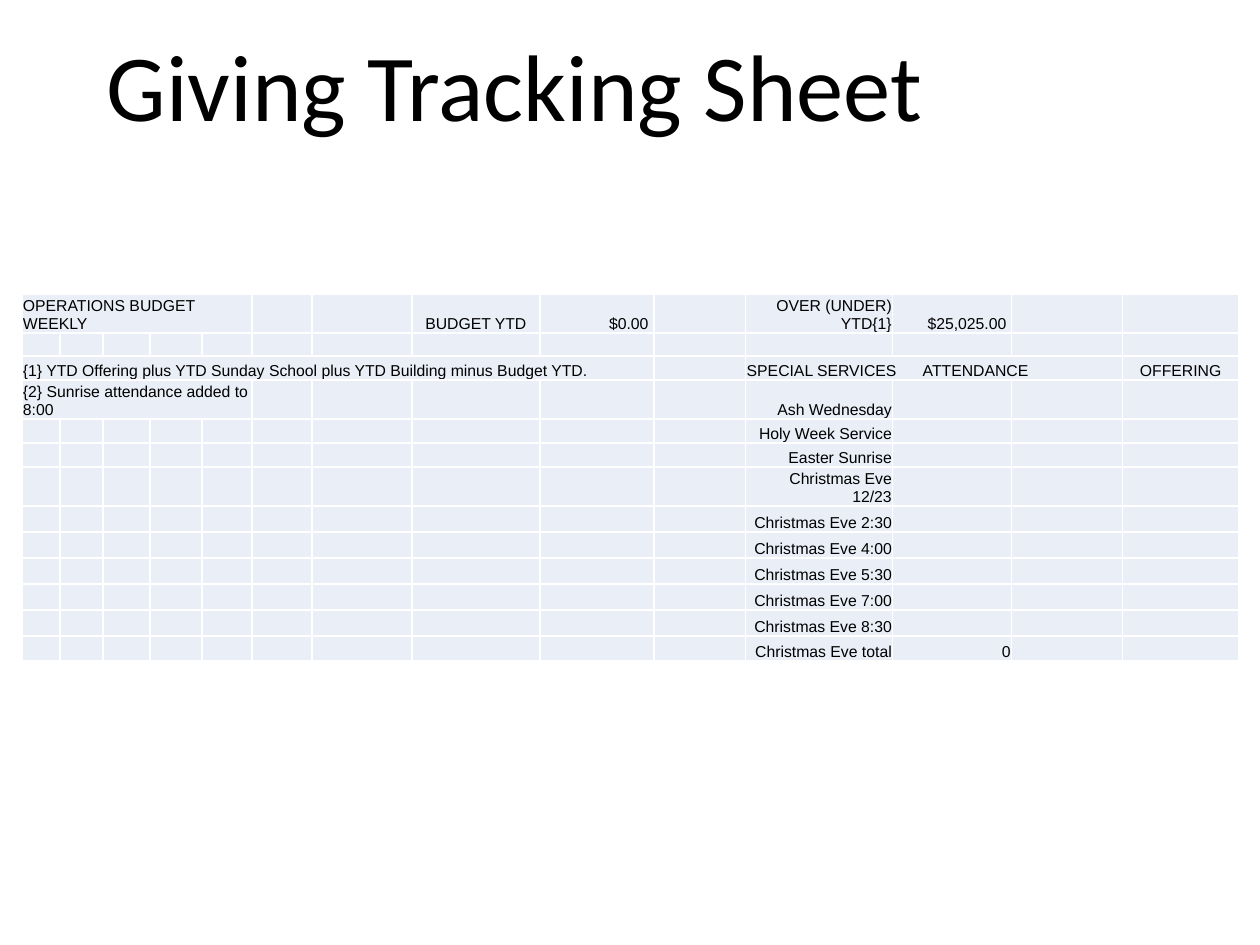
from lxml.etree import SubElement
from pptx import Presentation
from pptx.dml.color import RGBColor
from pptx.enum.text import MSO_ANCHOR as Anchor, MSO_AUTO_SIZE as Fit, PP_ALIGN as Align
from pptx.oxml.ns import qn
from pptx.util import Pt

SCALE = 914400 / 126
BLACK = RGBColor(0x00, 0x00, 0x00)
WHITE = RGBColor(0xFF, 0xFF, 0xFF)
PALE = RGBColor(0xEA, 0xEF, 0xF7)

HEAD = {"name": "Calibri", "size": Pt(54), "bold": False}
BODY = {"name": "Arial", "size": Pt(9), "bold": False}

COLS = [38, 43, 47, 52, 50, 60, 100, 128, 114, 92, 147, 119, 111, 116]
ROWS = [39, 23, 24, 39, 24, 24, 39] + [26] * 5 + [25]
SPANS = [(0, 0, 5), (2, 0, 9), (2, 10, 3), (3, 0, 5)]
TAB = 176
NAME_COL = 10
FIRST = 3
EVENTS = [
    "Ash Wednesday", "Holy Week Service", "Easter Sunrise",
    *[f"Christmas Eve {when}" for when in
      ("12/23", "2:30", "4:00", "5:30", "7:00", "8:30", "total")],
]
CELLS = {
    (0, 0): ("OPERATIONS BUDGET WEEKLY", Align.LEFT),
    (0, 7): ("BUDGET YTD", Align.CENTER),
    (0, 8): ("$0.00 ", Align.RIGHT),
    (0, 10): ("OVER (UNDER) YTD{1}", Align.RIGHT),
    (0, 11): ("$25,025.00 ", Align.RIGHT),
    (2, 0): ("{1} YTD Offering plus YTD Sunday School plus YTD Building "
             "minus Budget YTD.", Align.LEFT),
    (2, 10): ("SPECIAL SERVICES\tATTENDANCE", Align.LEFT),
    (2, 13): ("OFFERING", Align.CENTER),
    (3, 0): ("{2} Sunrise attendance added to 8:00", Align.LEFT),
    (12, 11): ("0", Align.RIGHT),
    **{(row, NAME_COL): (name, Align.RIGHT)
       for row, name in enumerate(EVENTS, FIRST)},
}


def px(num):
    """Turn px into EMU."""
    return round(num * SCALE)


def style(item, form):
    """Set each value of a format on an item."""
    for key, value in form.items():
        setattr(item, key, value)


def write(para, text, form, align):
    """Write black text in a paragraph."""
    para.alignment = align
    run = para.add_run()
    run.text = text
    style(run.font, form)
    run.font.color.rgb = BLACK


def add_tab(para, pos):
    """Add a left tab stop to a paragraph."""
    tabs = SubElement(para._p.get_or_add_pPr(), qn("a:tabLst"))
    SubElement(tabs, qn("a:tab"), pos=str(px(pos)), algn="l")


def edge(cell):
    """Draw thin white borders around a cell."""
    props = cell._tc.get_or_add_tcPr()
    for side in ("lnL", "lnR", "lnT", "lnB"):
        line = SubElement(props, qn(f"a:{side}"), w=str(Pt(1)))
        fill = SubElement(line, qn("a:solidFill"))
        SubElement(fill, qn("a:srgbClr"), val=str(WHITE))


def add_title(slide, left, top, width, height):
    """Place the slide title in its box."""
    title = slide.shapes.title
    style(title, {"left": px(left), "top": px(top),
                  "width": px(width), "height": px(height)})
    frame = title.text_frame
    style(frame, {"word_wrap": True, "auto_size": Fit.NONE,
                  "vertical_anchor": Anchor.TOP})
    write(frame.paragraphs[0], "Giving Tracking Sheet", HEAD, Align.LEFT)


def fill_cell(cell, entry):
    """Format a cell and write its entry, if any."""
    style(cell, {"margin_left": px(1), "margin_right": px(1),
                 "margin_top": px(1), "margin_bottom": 0,
                 "vertical_anchor": Anchor.BOTTOM})
    edge(cell)
    cell.fill.solid()
    cell.fill.fore_color.rgb = PALE
    para = cell.text_frame.paragraphs[0]
    if entry:
        text, align = entry
        write(para, text, BODY, align)
        if "\t" in text:
            add_tab(para, TAB)
    else:
        SubElement(para._p, qn("a:endParaRPr"), sz="900")


def add_sheet(slide, left, top):
    """Place the giving table at a corner."""
    table = slide.shapes.add_table(
        len(ROWS), len(COLS), px(left), px(top),
        px(sum(COLS)), px(sum(ROWS))).table
    style(table, {"first_row": False, "horz_banding": False})
    for col, width in zip(table.columns, COLS):
        col.width = px(width)
    for row, height in zip(table.rows, ROWS):
        row.height = px(height)
    for row, col, count in SPANS:
        table.cell(row, col).merge(table.cell(row, col + count - 1))
    for row in range(len(ROWS)):
        for col in range(len(COLS)):
            fill_cell(table.cell(row, col), CELLS.get((row, col)))


def main():
    """Build and save the slide."""
    deck = Presentation()
    style(deck, {"slide_width": px(1260), "slide_height": px(945)})
    slide = deck.slides.add_slide(deck.slide_layouts[5])
    add_title(slide, 94, 21, 987, 127)
    add_sheet(slide, 22, 294)
    deck.save("out.pptx")


if __name__ == "__main__":
    main()
